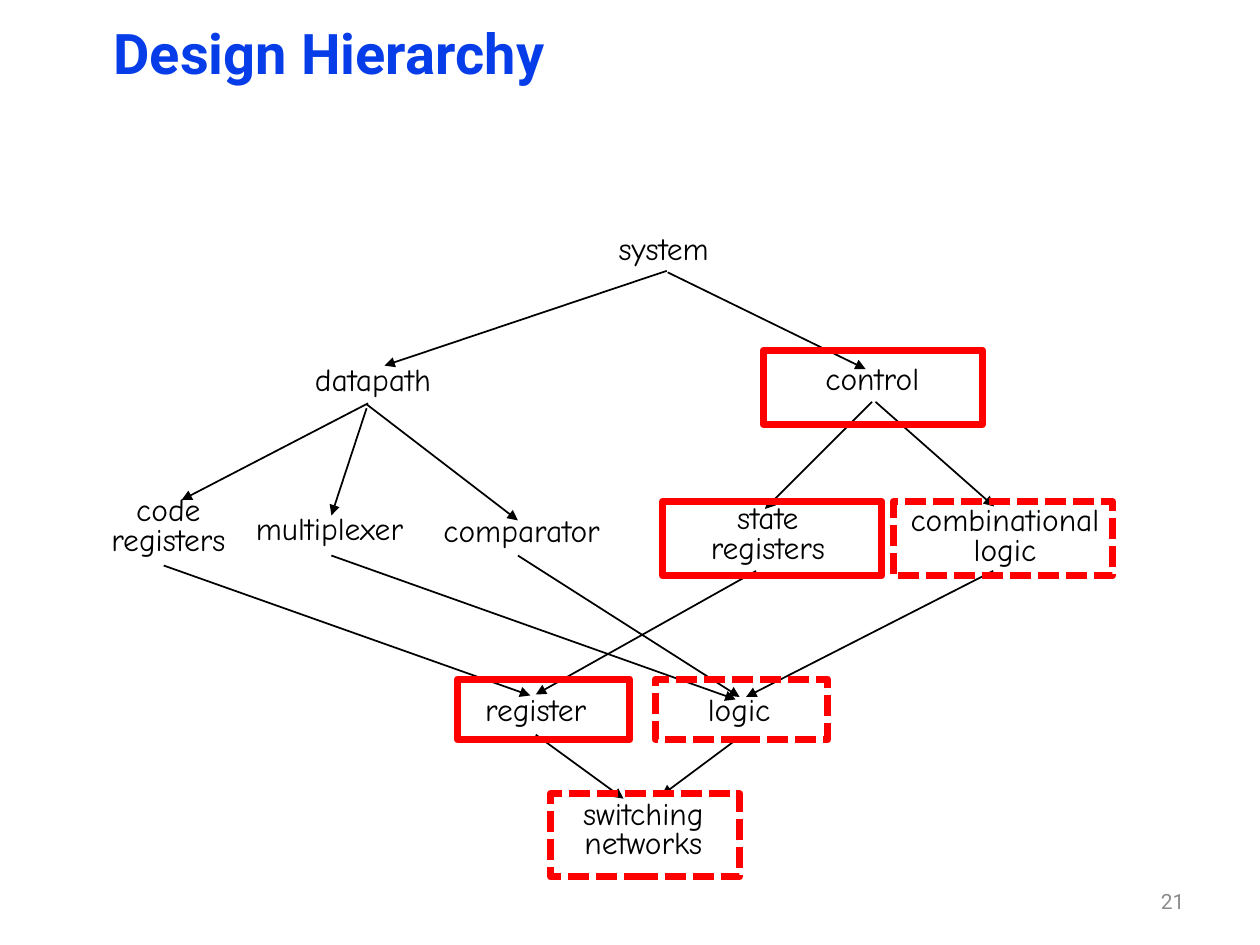
from lxml import etree
from pptx import Presentation
from pptx import util as u
from pptx.dml import color
from pptx.enum import dml, shapes, text
from pptx.oxml import ns


def rgb(value):
    return color.RGBColor.from_string(value)


def add_text(box, lines, size, font, hex_color, align, margins, bold=False, spacing=None):
    shape = slide.shapes.add_textbox(*[u.Cm(length) for length in box])
    frame = shape.text_frame
    frame.margin_left = frame.margin_right = u.Cm(margins[0])
    frame.margin_top = frame.margin_bottom = u.Cm(margins[1])
    paragraph = frame.paragraphs[0]
    paragraph.alignment = align
    paragraph.line_spacing = spacing
    for index, line in enumerate(lines):
        if index:
            paragraph.add_line_break()
        run = paragraph.add_run()
        run.text = line
        run.font.size = u.Pt(size)
        run.font.name = font
        run.font.bold = bold
        run.font.color.rgb = rgb(hex_color)
    return frame


presentation = Presentation()
presentation.slide_width = u.Cm(25.4)
presentation.slide_height = u.Cm(19.05)
slide = presentation.slides.add_slide(presentation.slide_layouts[6])

LEFT, CENTER, RIGHT = text.PP_ALIGN.LEFT, text.PP_ALIGN.CENTER, text.PP_ALIGN.RIGHT

nodes = [
    (["system"], 12.42, 4.7, 2.84),
    (["datapath"], 6.3, 7.34, 3.38),
    (["control"], 16.59, 7.32, 2.82),
    (["state", "registers"], 13.36, 10.13, 4.24),
    (["combinational", "logic"], 17.25, 10.16, 6.02),
    (["multiplexer"], 5.11, 10.34, 3.78),
    (["comparator"], 8.89, 10.39, 3.86),
    (["code", "registers"], 2.11, 9.96, 2.57),
    (["register"], 9.73, 14, 2.95),
    (["logic"], 14.22, 14, 2.34),
    (["switching", "networks"], 10.39, 16.08, 5.16),
]
for lines, left, top, width in nodes:
    two_lines = len(lines) == 2
    box = (left, top, width, 1.52 if two_lines else 0.94)
    frame = add_text(box, lines, 18, "Comic Neue", "000000",
                     CENTER if two_lines else LEFT, (0.05, 0.08), spacing=u.Pt(17))
    frame.word_wrap = False

arrows = [
    (13.46, 5.49, 17.45, 7.44),
    (13.44, 5.46, 7.75, 7.37),
    (7.39, 8.23, 6.68, 10.39),
    (7.39, 8.15, 10.44, 10.49),
    (7.42, 8.13, 3.66, 10.08),
    (3.3, 11.4, 10.69, 14.02),
    (15.24, 11.51, 10.8, 14),
    (17.58, 8.1, 15.42, 10.26),
    (17.65, 8.1, 20.04, 10.21),
    (10.44, 11.2, 14.91, 14.05),
    (6.68, 11.2, 14.83, 14.1),
    (20.02, 11.51, 15.04, 14.05),
    (14.91, 14.86, 13.34, 16.03),
    (10.8, 14.81, 12.57, 16.1),
]
for ends in arrows:
    arrow = slide.shapes.add_connector(shapes.MSO_CONNECTOR.STRAIGHT,
                                       *[u.Cm(length) for length in ends])
    arrow.line.width = u.Pt(1)
    arrow.line.color.rgb = rgb("000000")
    etree.SubElement(arrow.line._get_or_add_ln(), ns.qn("a:tailEnd"), type="triangle")
    etree.SubElement(arrow._element.spPr, ns.qn("a:effectLst"))

title = add_text((2.11, 0.43, 15.9, 2.49), ["Design Hierarchy"], 32, "Roboto", "063DE8",
                 LEFT, (0.18, 0.08), bold=True, spacing=0.91)
title.word_wrap = True

highlights = [
    (13.21, 13.69, 3.48, 1.22, True),
    (11.1, 16, 3.81, 1.68, True),
    (18.01, 10.11, 4.42, 1.5, True),
    (15.39, 7.06, 4.42, 1.5, False),
    (13.36, 10.11, 4.42, 1.5, False),
    (9.22, 13.69, 3.48, 1.22, False),
]
for *box, dashed in highlights:
    frame_box = slide.shapes.add_shape(shapes.MSO_SHAPE.RECTANGLE,
                                       *[u.Cm(length) for length in box])
    frame_box.shadow.inherit = False
    frame_box.fill.background()
    frame_box.line.width = u.Pt(4)
    frame_box.line.color.rgb = rgb("FF0000")
    if dashed:
        frame_box.line.dash_style = dml.MSO_LINE.SQUARE_DOT

page_number = add_text((18.21, 17.65, 5.92, 1.02), ["21"], 12, "Roboto", "8C8C8C",
                       RIGHT, (0.25, 0.13))
page_number.word_wrap = True
page_number.vertical_anchor = text.MSO_ANCHOR.MIDDLE

presentation.save("out.pptx")
